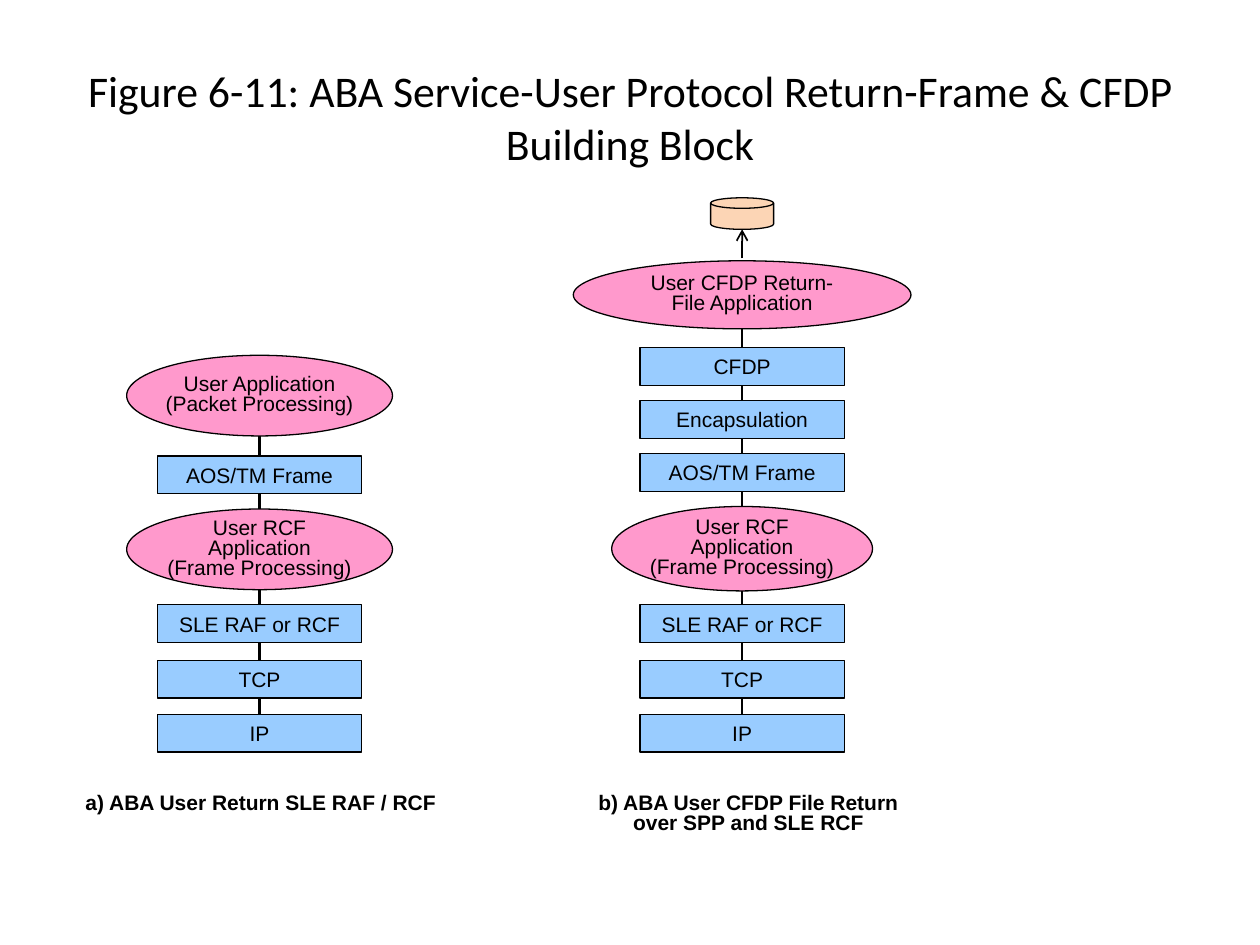
from lxml.etree import SubElement
from pptx import Presentation
from pptx.dml.color import RGBColor
from pptx.enum.shapes import MSO_CONNECTOR, MSO_SHAPE
from pptx.enum.text import MSO_ANCHOR, PP_ALIGN
from pptx.oxml.ns import qn
from pptx.util import Inches, Pt

COLORS = {"black": "000000", "application": "FF99CC", "protocol": "99CCFF", "file": "FCD5B5"}
BOX_WIDTH, BOX_HEIGHT = 1.62, 0.3
LEFT_CENTER, RIGHT_CENTER = 2.06, 5.89
RCF_TEXT = "User RCF\vApplication\n(Frame Processing)"


def rgb(name):
    return RGBColor.from_string(COLORS[name])


class StackDiagram:
    """Holds the style and the current slide; shapes are placed by centre and top."""

    def __init__(self, slide):
        self.slide = slide
        self.font, self.size = "Arial", 12

    def set_text(self, shape, text, spacing=None, margins=None, bold=False, font=None, size=None, wrap=True):
        frame = shape.text_frame
        frame.text = text
        frame.word_wrap = wrap
        frame.vertical_anchor = MSO_ANCHOR.MIDDLE
        if margins:
            frame.margin_left = frame.margin_right = Inches(margins[0])
            frame.margin_top = frame.margin_bottom = Inches(margins[1])
        for paragraph in frame.paragraphs:
            paragraph.alignment = PP_ALIGN.CENTER
            paragraph.line_spacing = spacing
            for run in paragraph.runs:
                run.font.name = font or self.font
                run.font.size = Pt(size or self.size)
                run.font.bold = bold
                run.font.color.rgb = rgb("black")

    def text(self, text, center, top, width, height, **style):
        box = self.slide.shapes.add_textbox(
            Inches(center - width / 2), Inches(top), Inches(width), Inches(height))
        self.set_text(box, text, **style)

    def shape(self, kind, color, center, top, width, height):
        shape = self.slide.shapes.add_shape(
            kind, Inches(center - width / 2), Inches(top), Inches(width), Inches(height))
        shape.shadow.inherit = False
        shape.fill.solid()
        shape.fill.fore_color.rgb = rgb(color)
        shape.line.color.rgb = rgb("black")
        shape.line.width = Pt(0.75)
        return shape

    def application(self, text, center, top, width, height):
        oval = self.shape(MSO_SHAPE.OVAL, "application", center, top, width, height)
        self.set_text(oval, text, spacing=0.8, margins=(0, 0))
        return oval

    def protocol(self, text, center, top):
        box = self.shape(MSO_SHAPE.RECTANGLE, "protocol", center, top, BOX_WIDTH, BOX_HEIGHT)
        self.set_text(box, text, margins=(0.04, 0.03))
        return box

    def line(self, center, start, end, width=1.5, target=None, arrow=False):
        connector = self.slide.shapes.add_connector(
            MSO_CONNECTOR.STRAIGHT, Inches(center), Inches(start), Inches(center), Inches(end))
        connector.line.color.rgb = rgb("black")
        connector.line.width = Pt(width)
        properties = connector._element.spPr
        if arrow:
            SubElement(properties.find(qn("a:ln")), qn("a:tailEnd"), type="arrow")
        SubElement(properties, qn("a:effectLst"))
        if target is not None:
            connector.end_connect(target, 0)

    def stack(self, center, top_oval, frame_oval, upper_protocols):
        """Two applications, each linked down to the next end of the stack."""
        text, top, width, height = top_oval
        self.application(text, center, top, width, height)
        rcf_top, rcf_width, rcf_height = frame_oval
        rcf = self.application(RCF_TEXT, center, rcf_top, rcf_width, rcf_height)
        ip = self.protocol("IP", center, 5.67)
        # Lines lie behind the protocol boxes they pass
        self.line(center, top + height, rcf_top, target=rcf)
        self.line(center, rcf_top + rcf_height, 5.67, target=ip)
        lower_protocols = [("SLE RAF or RCF", 4.8), ("TCP", 5.24)]
        for name, box_top in upper_protocols + lower_protocols:
            self.protocol(name, center, box_top)


def main():
    presentation = Presentation()
    presentation.slide_width, presentation.slide_height = Inches(10), Inches(7.5)
    diagram = StackDiagram(presentation.slides.add_slide(presentation.slide_layouts[6]))

    # Title
    diagram.text("Figure 6-11: ABA Service-User Protocol Return-Frame & CFDP Building Block",
                 5, 0.3, 9, 1.25, font="Calibri", size=25)

    # Protocol stacks
    diagram.stack(LEFT_CENTER, ("User Application\n(Packet Processing)", 2.82, 2.11, 0.64),
                  (4.04, 2.11, 0.64), [("AOS/TM Frame", 3.62)])
    diagram.stack(RIGHT_CENTER, ("User CFDP Return-\nFile Application", 2.07, 2.68, 0.54),
                  (4.02, 2.07, 0.67),
                  [("CFDP", 2.76), ("Encapsulation", 3.18), ("AOS/TM Frame", 3.6)])

    # File store
    diagram.line(RIGHT_CENTER, 2.05, 1.82, width=1, arrow=True)
    diagram.shape(MSO_SHAPE.FLOWCHART_MAGNETIC_DISK, "file", RIGHT_CENTER, 1.57, 0.5, 0.25)

    # Captions
    caption = {"spacing": 0.8, "bold": True, "wrap": False}
    diagram.text("a) ABA User Return SLE RAF / RCF", 2.07, 6.25, 3.01, 0.27, **caption)
    diagram.text("b) ABA User CFDP File Return\nover SPP and SLE RCF", 5.94, 6.25, 2.61, 0.43, **caption)

    presentation.save("out.pptx")


if __name__ == "__main__":
    main()
